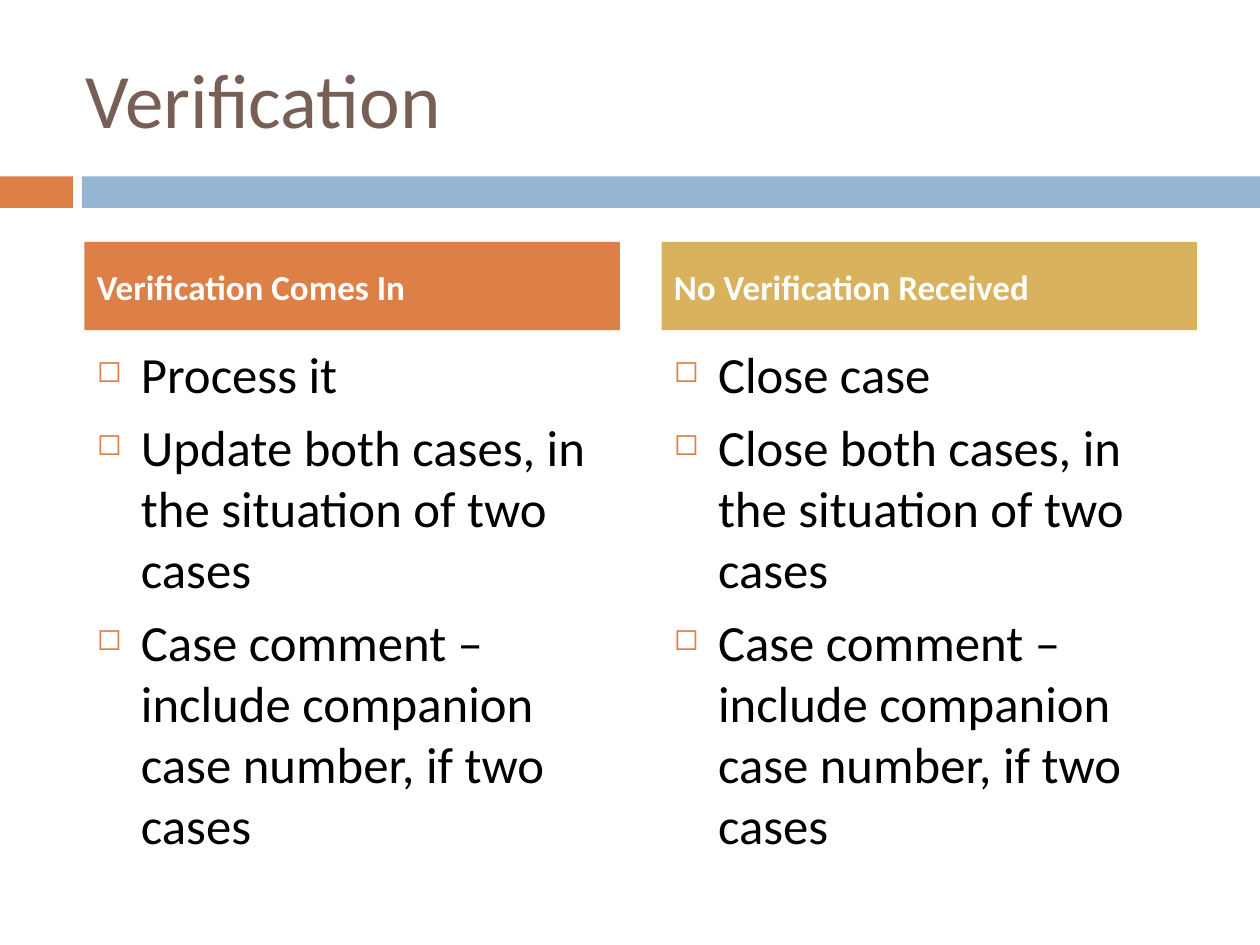
from lxml.etree import SubElement
from pptx import Presentation
from pptx.dml.color import RGBColor
from pptx.enum.shapes import MSO_SHAPE as Shape
from pptx.enum.text import MSO_ANCHOR as Anchor, PP_ALIGN as Align
from pptx.oxml.ns import qn
from pptx.util import Inches, Pt

ORANGE = RGBColor(0xDD, 0x80, 0x47)
BLUE = RGBColor(0x94, 0xB6, 0xD2)
GOLD = RGBColor(0xD8, 0xB2, 0x5C)
BROWN = RGBColor(0x77, 0x5F, 0x55)
BLACK = RGBColor(0, 0, 0)
WHITE = RGBColor(0xFF, 0xFF, 0xFF)

FONT = "Calibri"
COLUMN_LEFT, COLUMN_STEP, COLUMN_WIDTH = 0.67, 4.58, 4.25
COLUMNS = [
    ("Verification Comes In", ORANGE, [
        "Process it",
        "Update both cases, in the situation of two cases",
        "Case comment – include companion case number, if two cases",
    ]),
    ("No Verification Received", GOLD, [
        "Close case",
        "Close both cases, in the situation of two cases",
        "Case comment – include companion case number, if two cases",
    ]),
]


def style_paragraph(paragraph, size, color, bold=False, space_before=0):
    paragraph.alignment = Align.LEFT
    paragraph.space_before = Pt(space_before)
    for run in paragraph.runs:
        run.font.name = FONT
        run.font.size = Pt(size)
        run.font.bold = bold
        run.font.color.rgb = color


def add_bullet(paragraph):
    properties = paragraph._p.get_or_add_pPr()
    properties.set("marL", str(Inches(0.35)))
    properties.set("indent", str(-Inches(0.35)))
    bullet_color = SubElement(properties, qn("a:buClr"))
    SubElement(bullet_color, qn("a:srgbClr"), val=str(ORANGE))
    SubElement(properties, qn("a:buSzPct"), val="60000")
    SubElement(properties, qn("a:buChar"), char="◻")


def add_bar(slide, left, top, width, height, color):
    bar = slide.shapes.add_shape(
        Shape.RECTANGLE, Inches(left), Inches(top), Inches(width), Inches(height))
    bar.shadow.inherit = False
    bar.fill.solid()
    bar.fill.fore_color.rgb = color
    bar.line.fill.background()
    return bar


def add_text_frame(slide, left, top, width, height):
    box = slide.shapes.add_textbox(
        Inches(left), Inches(top), Inches(width), Inches(height))
    box.text_frame.word_wrap = True
    return box.text_frame


def add_title(slide, title):
    frame = add_text_frame(slide, 0.58, 0.3, 8.92, 0.95)
    frame.vertical_anchor = Anchor.MIDDLE
    frame.text = title
    style_paragraph(frame.paragraphs[0], 44, BROWN)


def add_heading(slide, left, heading, color):
    frame = add_bar(slide, left, 1.92, COLUMN_WIDTH, 0.7, color).text_frame
    frame.vertical_anchor = Anchor.MIDDLE
    frame.text = heading
    style_paragraph(frame.paragraphs[0], 20, WHITE, bold=True, space_before=7)


def add_steps(slide, left, steps):
    frame = add_text_frame(slide, left, 2.67, COLUMN_WIDTH, 3.92)
    frame.text = "\n".join(steps)
    for paragraph in frame.paragraphs:
        style_paragraph(paragraph, 29, BLACK, space_before=7)
        add_bullet(paragraph)


def main():
    deck = Presentation()
    deck.slide_width, deck.slide_height = Inches(10), Inches(7.5)
    slide = deck.slides.add_slide(deck.slide_layouts[6])

    add_bar(slide, 0, 1.4, 0.58, 0.25, ORANGE)
    add_bar(slide, 0.65, 1.4, 9.35, 0.25, BLUE)
    add_title(slide, "Verification")
    for index, (heading, color, steps) in enumerate(COLUMNS):
        left = COLUMN_LEFT + index * COLUMN_STEP
        add_steps(slide, left, steps)
        add_heading(slide, left, heading, color)

    deck.save("out.pptx")


if __name__ == "__main__":
    main()
